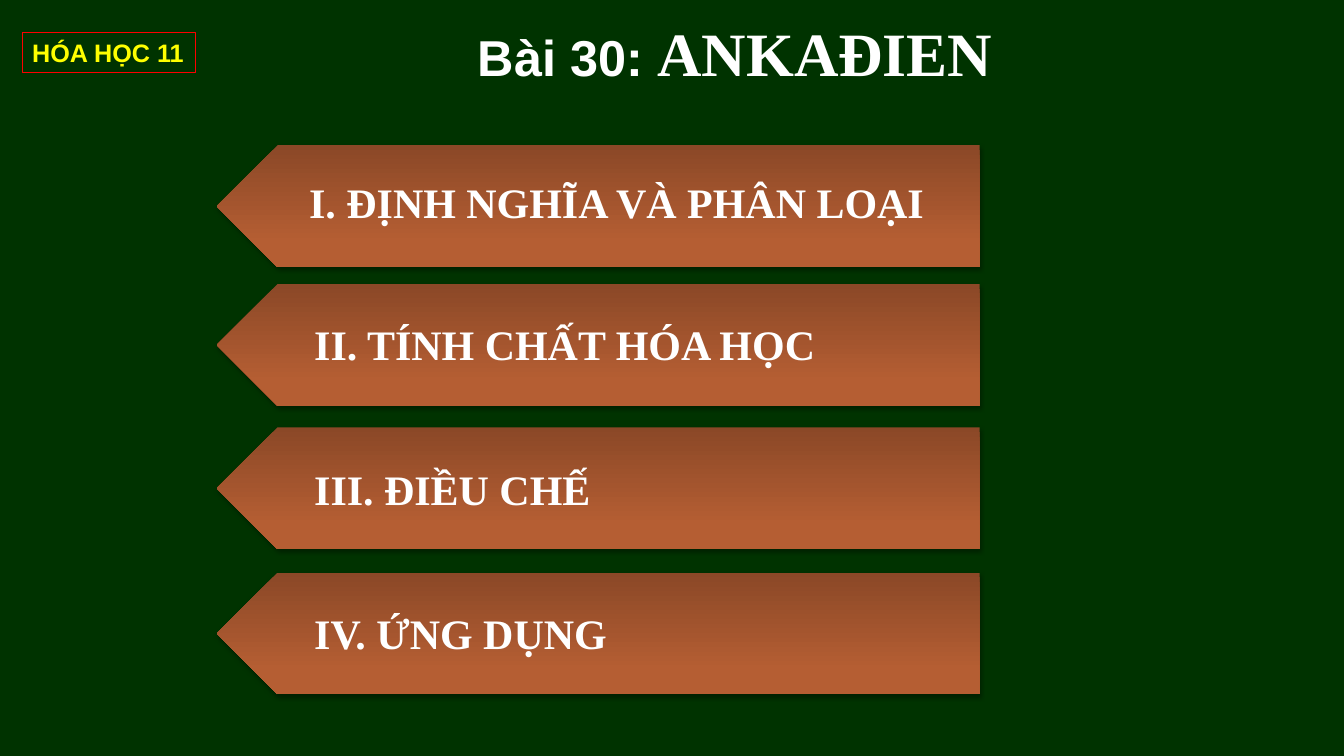
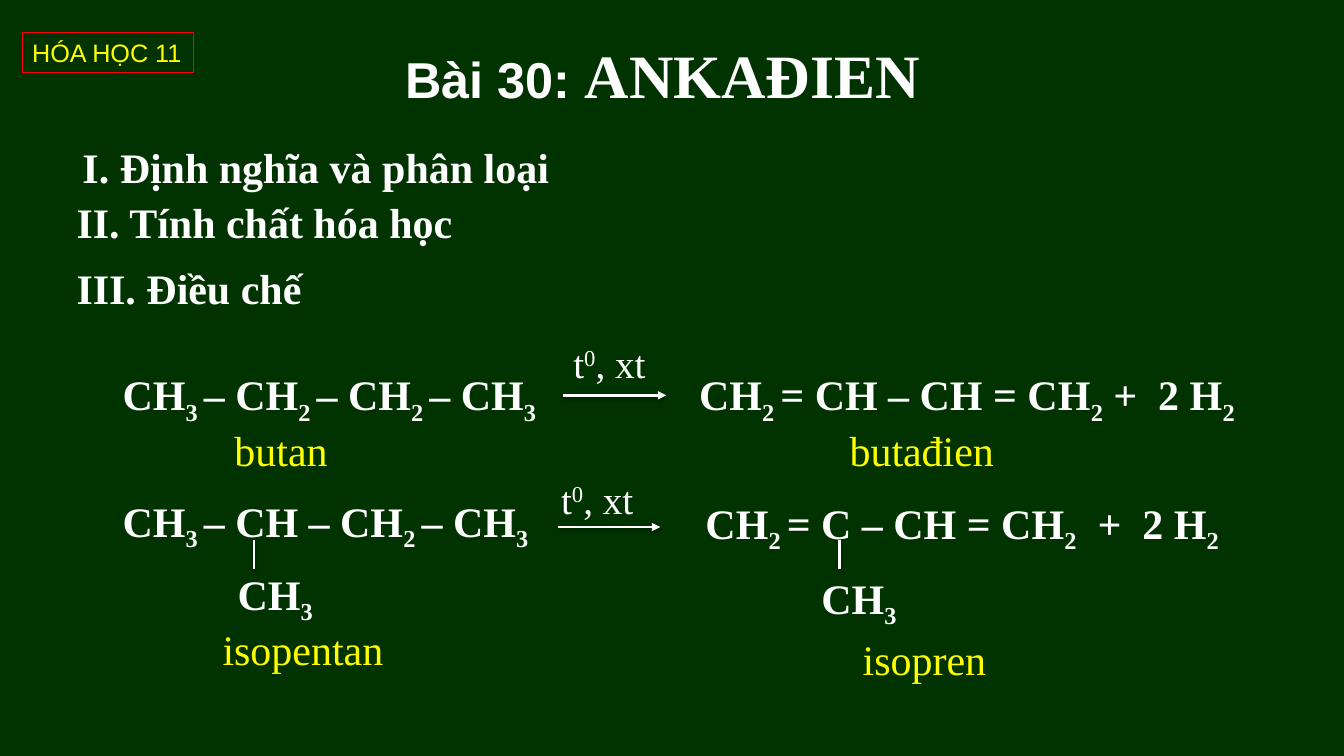
import copy

import pptx
import pptx.dml.color
import pptx.enum.shapes
import pptx.enum.text
import pptx.oxml
import pptx.oxml.ns
import pptx.util
from lxml import etree

Cm = pptx.util.Cm
Pt = pptx.util.Pt
qn = pptx.oxml.ns.qn


def rgb(value):
    return pptx.dml.color.RGBColor.from_string(value)


class Deck:
    BACKGROUND = "003300"
    WHITE = "FFFFFF"
    YELLOW = "FFFF00"
    RED = "FF0000"
    BANNER_STOPS = ((0, "8B4827"), (0.8, "B55E33"), (1, "B85D31"))
    SANS = "Arial"
    SERIF = "Times New Roman"

    def __init__(self):
        self.prs = pptx.Presentation()
        self.prs.slide_width = Cm(33.87)
        self.prs.slide_height = Cm(19.05)
        fill = self.prs.slide_master.background.fill
        fill.solid()
        fill.fore_color.rgb = rgb(self.BACKGROUND)

    def font(self, r, size, name, color, bold=False):
        r.font.size = Pt(size)
        r.font.name = name
        r.font.bold = bold
        r.font.color.rgb = rgb(color)

    def shadow(self, s, opacity):
        effects = etree.SubElement(s._element.spPr, qn("a:effectLst"))
        outer = etree.SubElement(
            effects, qn("a:outerShdw"), blurRad=str(Pt(3.1)),
            dist=str(Pt(1.7)), dir="5400000", rotWithShape="0")
        color = etree.SubElement(outer, qn("a:srgbClr"), val="000000")
        etree.SubElement(color, qn("a:alpha"), val=str(opacity * 1000))

    def slide(self, title_x, title_y, tag_w, tag_bold):
        self.current = self.prs.slides.add_slide(self.prs.slide_layouts[5])
        self.title(title_x, title_y)
        self.tag(tag_w, tag_bold)

    def title(self, x, y):
        s = self.current.shapes.title
        s.left, s.top, s.width, s.height = Cm(x), Cm(y), Cm(15), Cm(2.13)
        tf = s.text_frame
        tf.word_wrap = True
        tf.auto_size = pptx.enum.text.MSO_AUTO_SIZE.NONE
        tf.vertical_anchor = pptx.enum.text.MSO_ANCHOR.TOP
        p = tf.paragraphs[0]
        p.alignment = pptx.enum.text.PP_ALIGN.LEFT
        for text, size, name in (("Bài 30: ", 36, self.SANS),
                                 ("ANKAĐIEN", 44, self.SERIF)):
            r = p.add_run()
            r.text = text
            self.font(r, size, name, self.WHITE, True)

    def tag(self, w, bold):
        s = self.current.shapes.add_shape(
            pptx.enum.shapes.MSO_SHAPE.RECTANGLE, Cm(0.56), Cm(0.81), Cm(w), Cm(1.02))
        s.shadow.inherit = False
        s.fill.background()
        s.line.color.rgb = rgb(self.RED)
        s.line.width = Pt(0.75)
        tf = s.text_frame
        tf.word_wrap = False
        tf.text = "HÓA HỌC 11"
        p = tf.paragraphs[0]
        p.alignment = pptx.enum.text.PP_ALIGN.LEFT
        self.font(p.runs[0], 18, self.SANS, self.YELLOW, bold)

    def banner(self, y):
        s = self.current.shapes.add_shape(
            pptx.enum.shapes.MSO_SHAPE.PENTAGON, Cm(5.46), Cm(y), Cm(19.23), Cm(3.07))
        s.rotation = 180
        s.fill.gradient()
        s.fill.gradient_angle = 90
        stops = s._element.spPr.find(".//" + qn("a:gsLst"))
        stops.append(copy.deepcopy(stops[-1]))
        for stop, (position, color) in zip(s.fill.gradient_stops, self.BANNER_STOPS):
            stop.position = position
            stop.color.rgb = rgb(color)
        s.line.fill.background()
        self.shadow(s, 35)

    def text(self, text, x, y, w=15, size=30, color=WHITE, bold=True, baseline=-25):
        s = self.current.shapes.add_textbox(Cm(x), Cm(y), Cm(w), Cm(1.55))
        tf = s.text_frame
        tf.word_wrap = True
        for i, part in enumerate(text.split("|")):
            if part:
                r = tf.paragraphs[0].add_run()
                r.text = part
                self.font(r, size, self.SERIF, color, bold)
                if i % 2:
                    r.font._element.set("baseline", str(baseline * 1000))

    def name(self, text, x, y):
        self.text(text, x, y, 5.5, color=self.YELLOW, bold=False)

    def line(self, x, y, dx=0, dy=0, arrow=False):
        s = self.current.shapes.add_connector(
            pptx.enum.shapes.MSO_CONNECTOR.STRAIGHT, Cm(x), Cm(y), Cm(x + dx), Cm(y + dy))
        s.line.color.rgb = rgb(self.WHITE)
        s.line.width = Pt(2)
        if arrow:
            etree.SubElement(s.line._get_or_add_ln(), qn("a:tailEnd"), type="triangle")
        self.shadow(s, 38)

    def reaction_arrow(self, x, y, label_x, label_y):
        self.line(x, y, dx=2.59, arrow=True)
        self.text("t|0|, xt", label_x, label_y, 3.18, 28, bold=False, baseline=30)

    def bond(self, x):
        self.line(x, 13.61, dy=0.74)


def contents_slide(deck):
    deck.slide(11.79, 0.25, 4.37, True)
    for banner_y, text, x, y in (
            (3.66, "I. ĐỊNH NGHĨA VÀ PHÂN LOẠI", 7.54, 4.32),
            (7.16, "II. TÍNH CHẤT HÓA HỌC", 7.67, 7.9),
            (10.77, "III. ĐIỀU CHẾ", 7.67, 11.56),
            (14.43, "IV. ỨNG DỤNG", 7.67, 15.19)):
        deck.banner(banner_y)
        deck.text(text, x, y, 17)


def preparation_slide(deck):
    deck.slide(9.96, 0.81, 4.32, False)
    for text, x, y in (
            ("I. Định nghĩa và phân loại", 1.83, 3.43),
            ("II. Tính chất hóa học", 1.68, 4.83),
            ("III. Điều chế", 1.68, 6.5),
            ("CH|3 |– CH|2 |– CH|2 |– CH|3", 2.84, 9.17),
            ("CH|2 |= CH – CH = CH|2| +  2 H|2", 17.37, 9.17),
            ("CH|3 |– CH – CH|2 |– CH|3", 2.84, 12.35),
            ("CH|2 |= C – CH = CH|2|  +  2 H|2", 17.53, 12.4),
            ("CH|3", 5.74, 14.2),
            ("CH|3", 20.45, 14.3)):
        deck.text(text, x, y)
    for text, x, y in (
            ("butan", 5.66, 10.57),
            ("butađien", 21.16, 10.57),
            ("isopentan", 5.36, 15.6),
            ("isopren", 21.49, 15.85)):
        deck.name(text, x, y)
    deck.reaction_arrow(14.2, 9.96, 14.2, 8.43)
    deck.reaction_arrow(14.05, 13.28, 13.89, 11.84)
    for x in (6.4, 21.16):
        deck.bond(x)


def main():
    deck = Deck()
    contents_slide(deck)
    preparation_slide(deck)
    deck.prs.save("out.pptx")


if __name__ == "__main__":
    main()
